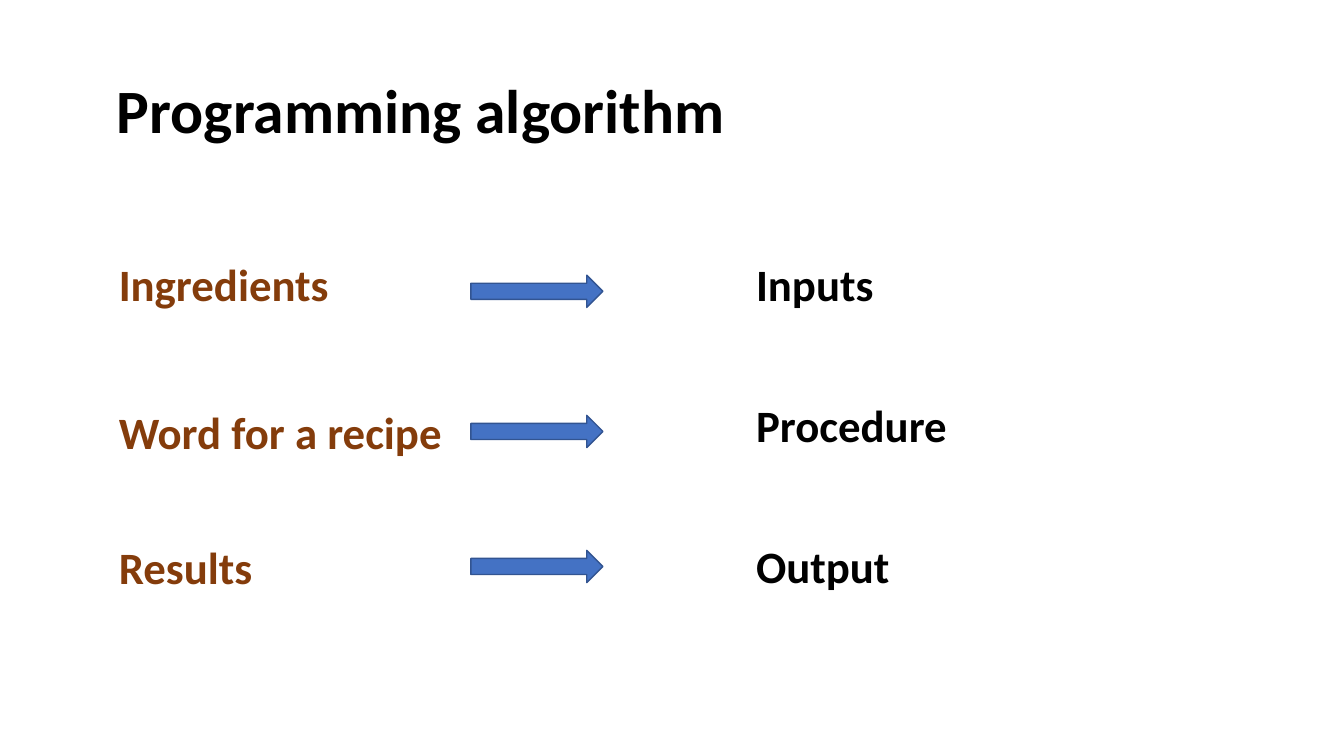
from dataclasses import dataclass

from pptx import Presentation
from pptx.dml.color import RGBColor
from pptx.enum.shapes import MSO_SHAPE
from pptx.enum.text import MSO_ANCHOR, MSO_AUTO_SIZE
from pptx.shapes.shapetree import GroupShapes, SlideShapes
from pptx.util import Emu, Pt

EMU_PER_PX = 9144  # 100 px to the inch
FONT = "Calibri"
BLACK, BROWN = "000000", "843C0B"
ARROW_FILL, ARROW_LINE = "4472C4", "325491"
RECIPE_LEFT, ARROW_LEFT, PROGRAM_LEFT = 108, 467, 740
ARROW_WIDTH, ARROW_HEIGHT = 131, 32
LABEL_HEIGHT = 64


@dataclass(frozen=True)
class Analogy:
    """A recipe term, the program term it maps to, and their places."""
    recipe: str
    recipe_top: int
    recipe_width: int
    program: str
    program_top: int
    program_width: int
    arrow_top: int


ANALOGIES = (
    Analogy("Ingredients", 250, 304, "Inputs", 250, 162, 273),
    Analogy("Word for a recipe", 397, 470, "Procedure", 390, 282, 412),
    Analogy("Results", 531, 162, "Output", 530, 162, 546),
)


def px(length: int) -> Emu:
    return Emu(length * EMU_PER_PX)


def rgb(value: str) -> RGBColor:
    return RGBColor.from_string(value)


def add_text(shapes: SlideShapes | GroupShapes, text: str, left: int, top: int,
             width: int, height: int = LABEL_HEIGHT, *, size: int = 32,
             color: str = BLACK, inset: int = 10, line_spacing: float = 1.0,
             anchor: MSO_ANCHOR = MSO_ANCHOR.TOP,
             auto_size: MSO_AUTO_SIZE = MSO_AUTO_SIZE.SHAPE_TO_FIT_TEXT) -> None:
    frame = shapes.add_textbox(px(left), px(top), px(width), px(height)).text_frame
    frame.word_wrap = True
    frame.auto_size = auto_size
    frame.vertical_anchor = anchor
    frame.margin_left = px(inset)
    paragraph = frame.paragraphs[0]
    paragraph.line_spacing = line_spacing
    run = paragraph.add_run()
    run.text = text
    run.font.name = FONT
    run.font.size = Pt(size)
    run.font.bold = True
    run.font.color.rgb = rgb(color)


def add_arrow(shapes: GroupShapes, top: int) -> None:
    arrow = shapes.add_shape(MSO_SHAPE.RIGHT_ARROW, px(ARROW_LEFT), px(top),
                             px(ARROW_WIDTH), px(ARROW_HEIGHT))
    arrow.shadow.inherit = False
    arrow.fill.solid()
    arrow.fill.fore_color.rgb = rgb(ARROW_FILL)
    arrow.line.color.rgb = rgb(ARROW_LINE)
    arrow.line.width = Pt(1)


def add_analogy(shapes: SlideShapes, row: Analogy) -> None:
    members = shapes.add_group_shape().shapes
    add_text(members, row.recipe, RECIPE_LEFT, row.recipe_top,
             row.recipe_width, color=BROWN)
    add_text(members, row.program, PROGRAM_LEFT, row.program_top,
             row.program_width)
    add_arrow(members, row.arrow_top)


def main() -> None:
    deck = Presentation()
    deck.slide_width, deck.slide_height = px(1333), px(750)
    shapes = deck.slides.add_slide(deck.slide_layouts[6]).shapes
    add_text(shapes, "Programming algorithm", 92, 40, 1150, 145, size=44,
             inset=24, line_spacing=0.9, anchor=MSO_ANCHOR.MIDDLE,
             auto_size=MSO_AUTO_SIZE.NONE)
    for row in ANALOGIES:
        add_analogy(shapes, row)
    deck.save("out.pptx")


if __name__ == "__main__":
    main()
